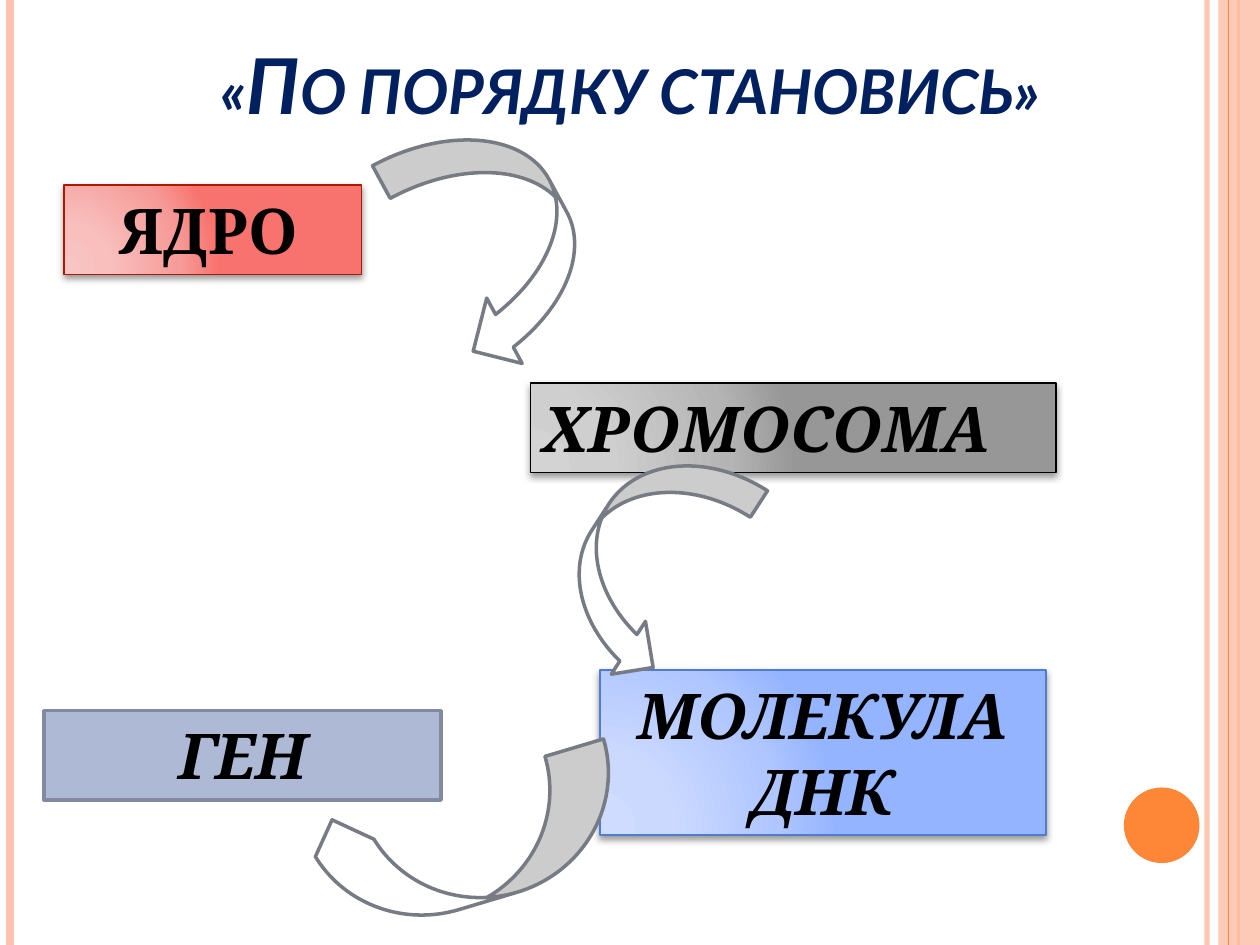
from dataclasses import dataclass
from typing import Optional

from lxml import etree
from pptx import Presentation
from pptx.dml.color import RGBColor
from pptx.enum.shapes import MSO_CONNECTOR, MSO_SHAPE as Shape
from pptx.enum.text import MSO_ANCHOR as Anchor, MSO_AUTO_SIZE as AutoSize, PP_ALIGN as Align
from pptx.oxml import parse_xml
from pptx.oxml.ns import nsdecls, qn
from pptx.util import Inches, Pt


@dataclass(frozen=True)
class Theme:
    peach: str = "FEC3AE"
    orange: str = "FE8637"
    navy: str = "002060"
    black: str = "000000"
    white: str = "FFFFFF"
    arrow_line: str = "777C84"
    title_font: str = "Lato"
    label_font: str = "Cambria"
    title_size: int = 44
    label_size: int = 36


@dataclass(frozen=True)
class Rule:
    x: float
    color: str
    width: float
    alpha: int = 100


@dataclass(frozen=True)
class Label:
    text: str
    box: tuple[float, ...]
    fill: tuple[str, ...]
    line: str
    line_width: float = 1
    align: Align = Align.CENTER
    italic: bool = True
    indent: float = 0


@dataclass(frozen=True)
class Arrow:
    kind: Shape
    box: tuple[float, ...]
    rotation: float
    tail: Optional[float] = None


THEME = Theme()
WIDTH, HEIGHT = 10, 7.5
GRADIENT_STOPS = (0, 30, 75, 100)

RULES = (
    Rule(9.58, THEME.peach, 3, 93),
    Rule(0.08, THEME.peach, 4.5),
    Rule(9.83, THEME.orange, 1.5),
)
INNER_RULE = Rule(9.75, THEME.orange, 0.75)
LABELS = (
    Label("ЯДРО", (0.51, 1.47, 2.36, 0.71), ("F8C5C3", "F8BFBD", "F69B98", "F8736E"),
          "AC1800", align=Align.LEFT, italic=False, indent=0.34),
    Label("ХРОМОСОМА", (4.21, 3.04, 4.17, 0.71), ("D3D3D3", "CFCFCF", "B4B4B4", "979797"),
          THEME.black, align=Align.LEFT),
    Label("МОЛЕКУЛА ДНК", (4.76, 5.32, 3.54, 1.31), ("CFDCFF", "CBD9FF", "AFC6FF", "95B4FF"),
          "4F7CCF"),
    Label("ГЕН", (0.35, 5.64, 3.15, 0.71), ("AEBAD5",), "818A9E", 2),
)
ARROWS = (
    Arrow(Shape.CURVED_DOWN_ARROW, (2.96, 1.31, 1.97, 1.18), 61.5),
    Arrow(Shape.CURVED_RIGHT_ARROW, (4.65, 3.47, 1, 1.92), 32.9),
    Arrow(Shape.CURVED_DOWN_ARROW, (2.49, 6.2, 2.49, 0.97), 163.4, 0.5),
)


def rgb(color: str) -> RGBColor:
    return RGBColor.from_string(color)


def set_alpha(props, percent: int) -> None:
    clr = next(props.iter(qn("a:srgbClr")))
    etree.SubElement(clr, qn("a:alpha"), val=str(percent * 1000))


def add_rule(s, rule: Rule) -> None:
    x = Inches(rule.x)
    c = s.shapes.add_connector(MSO_CONNECTOR.STRAIGHT, x, 0, x, Inches(HEIGHT))
    c.line.color.rgb = rgb(rule.color)
    c.line.width = Pt(rule.width)
    if rule.alpha < 100:
        set_alpha(c.line._get_or_add_ln(), rule.alpha)
    etree.SubElement(c._element.spPr, qn("a:effectLst"))


def add_shape(s, kind: Shape, box: tuple[float, ...], fill: str,
              line: Optional[str] = None, line_width: float = 1):
    sp = s.shapes.add_shape(kind, *map(Inches, box))
    sp.shadow.inherit = False
    sp.fill.solid()
    sp.fill.fore_color.rgb = rgb(fill)
    if line:
        sp.line.color.rgb = rgb(line)
        sp.line.width = Pt(line_width)
    else:
        sp.line.fill.background()
    return sp


def set_gradient(sp, colors: tuple[str, ...]) -> None:
    stops = "".join(
        f'<a:gs pos="{pos * 1000}"><a:srgbClr val="{color}"/></a:gs>'
        for pos, color in zip(GRADIENT_STOPS, colors)
    )
    grad = parse_xml(
        f'<a:gradFill {nsdecls("a")} rotWithShape="1"><a:gsLst>{stops}</a:gsLst>'
        '<a:path path="circle"><a:fillToRect l="5000" t="100000" r="120000" b="10000"/>'
        '</a:path></a:gradFill>'
    )
    props = sp._element.spPr
    props.replace(props.find(qn("a:solidFill")), grad)


def set_shadow(sp) -> None:
    effects = sp._element.spPr.find(qn("a:effectLst"))
    effects.append(parse_xml(
        f'<a:outerShdw {nsdecls("a")} blurRad="{Pt(4)}" dist="{Pt(2)}" dir="5400000" '
        f'rotWithShape="0"><a:srgbClr val="{THEME.black}"><a:alpha val="40000"/>'
        '</a:srgbClr></a:outerShdw>'
    ))


def style_text(p, font: str, size: int, color: str, italic: bool, align: Align) -> None:
    p.alignment = align
    for r in p.runs:
        r.font.name = font
        r.font.size = Pt(size)
        r.font.bold = True
        r.font.italic = italic
        r.font.color.rgb = rgb(color)


def add_label(s, label: Label) -> None:
    sp = add_shape(s, Shape.RECTANGLE, label.box, label.fill[0], label.line, label.line_width)
    if len(label.fill) > 1:
        set_gradient(sp, label.fill)
        set_shadow(sp)
    tf = sp.text_frame
    tf.text = label.text
    tf.word_wrap = True
    tf.auto_size = AutoSize.SHAPE_TO_FIT_TEXT
    tf.vertical_anchor = Anchor.TOP
    p = tf.paragraphs[0]
    style_text(p, THEME.label_font, THEME.label_size, THEME.black, label.italic, label.align)
    if label.indent:
        p._p.get_or_add_pPr().set("marL", str(Inches(label.indent)))


def add_arrow(s, arrow: Arrow) -> None:
    sp = add_shape(s, arrow.kind, arrow.box, THEME.white, THEME.arrow_line, 2)
    sp.rotation = arrow.rotation
    if arrow.tail is not None:
        sp.adjustments[0] = arrow.tail


def set_title(s, text: str) -> None:
    sp = s.shapes.title
    sp.left, sp.top, sp.width, sp.height = map(Inches, (0.63, 0.21, 8.75, 0.87))
    tf = sp.text_frame
    tf.text = text
    tf.word_wrap = True
    tf.auto_size = AutoSize.NONE
    tf.vertical_anchor = Anchor.BOTTOM
    p = tf.paragraphs[0]
    style_text(p, THEME.title_font, THEME.title_size, THEME.navy, True, Align.CENTER)
    p.runs[0].font._element.set("cap", "small")


def main() -> None:
    prs = Presentation()
    prs.slide_width, prs.slide_height = Inches(WIDTH), Inches(HEIGHT)
    s = prs.slides.add_slide(prs.slide_layouts[5])
    for rule in RULES:
        add_rule(s, rule)
    band = add_shape(s, Shape.RECTANGLE, (9.67, 0, 0.33, HEIGHT), THEME.peach)
    set_alpha(band._element.spPr, 87)
    add_rule(s, INNER_RULE)
    add_shape(s, Shape.OVAL, (8.92, 6.25, 0.6, 0.6), THEME.orange)
    set_title(s, "«По порядку становись»")
    for label in LABELS:
        add_label(s, label)
    for arrow in ARROWS:
        add_arrow(s, arrow)
    prs.save("out.pptx")


if __name__ == "__main__":
    main()
